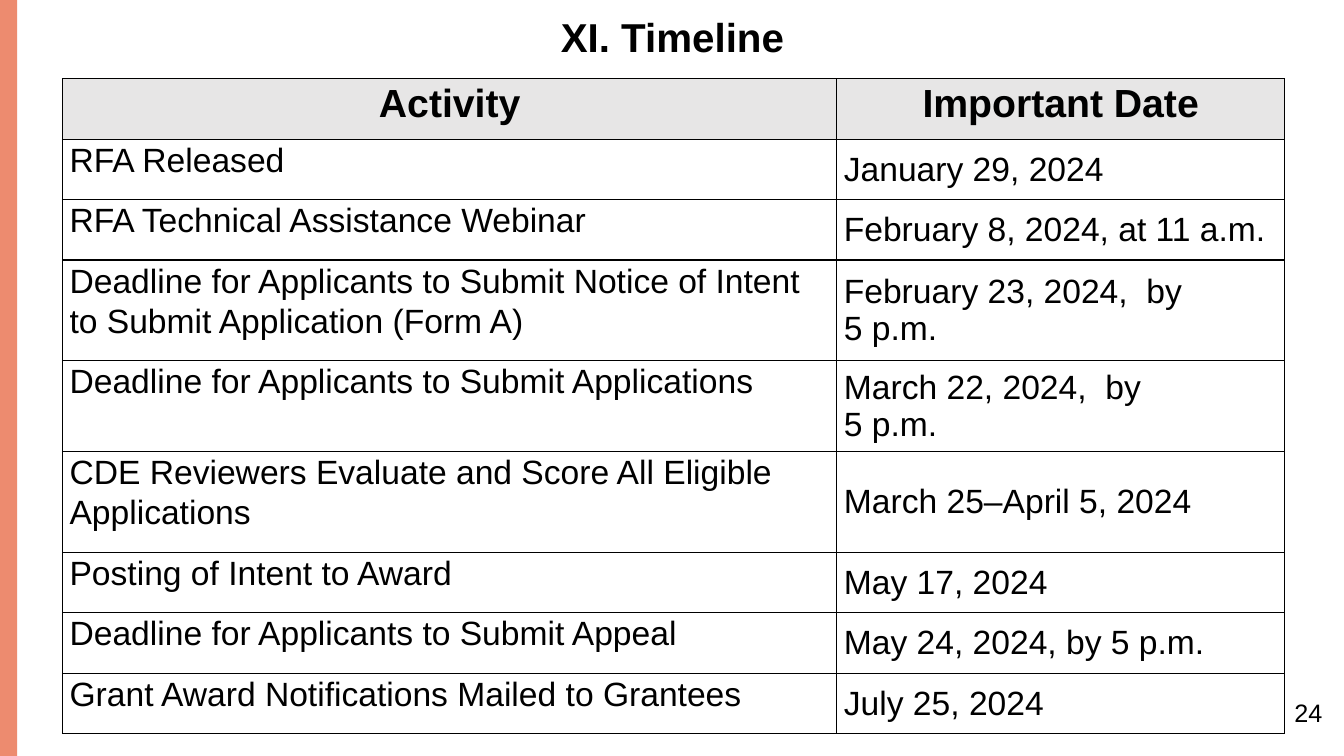
from dataclasses import dataclass

from lxml import etree
from pptx import Presentation
from pptx.dml.color import RGBColor
from pptx.enum.shapes import MSO_SHAPE
from pptx.enum.text import MSO_ANCHOR, PP_ALIGN
from pptx.oxml.ns import qn
from pptx.util import Inches, Pt

RECTANGLE = MSO_SHAPE.RECTANGLE
TOP, MIDDLE = MSO_ANCHOR.TOP, MSO_ANCHOR.MIDDLE
LEFT, CENTER = PP_ALIGN.LEFT, PP_ALIGN.CENTER


@dataclass(frozen=True)
class Theme:
    """Colours and type sizes of the deck."""
    font: str = "Arial"
    ink: str = "000000"
    accent: str = "ED8B6F"
    header: str = "E7E6E6"
    paper: str = "FFFFFF"
    title: float = 28.8
    heading: float = 28
    body: float = 24
    number: float = 18
    rule: float = 1


THEME = Theme()
COLUMN_WIDTHS = (7.68, 4.44)
HEADINGS = ("Activity", "Important Date")
TIMELINE = (
    (0.6, "RFA Released", "January 29, 2024"),
    (0.6, "RFA Technical Assistance Webinar", "February 8, 2024, at 11 a.m."),
    (1, "Deadline for Applicants to Submit Notice of Intent to Submit Application (Form A)",
     "February 23, 2024,  by \n5 p.m."),
    (0.9, "Deadline for Applicants to Submit Applications", "March 22, 2024,  by \n5 p.m."),
    (1, "CDE Reviewers Evaluate and Score All Eligible Applications", "March 25–April 5, 2024"),
    (0.6, "Posting of Intent to Award", "May 17, 2024"),
    (0.6, "Deadline for Applicants to Submit Appeal", "May 24, 2024, by 5 p.m."),
    (0.6, "Grant Award Notifications Mailed to Grantees", "July 25, 2024"),
)


def write(frame, text, *, size, bold=False, align=LEFT, leading=1.0, gap=0):
    """Write one formatted paragraph into a text frame."""
    frame.word_wrap = True
    para = frame.paragraphs[0]
    para.text = text
    para.alignment = align
    para.line_spacing = leading
    para.space_before = para.space_after = Pt(gap)
    for span in para.runs:
        span.font.name = THEME.font
        span.font.size = Pt(size)
        span.font.bold = bold
        span.font.color.rgb = RGBColor.from_string(THEME.ink)


def add_side_band(page, left, top, width, height):
    """Draw the coloured band along the page edge."""
    band = page.shapes.add_shape(
        RECTANGLE, Inches(left), Inches(top), Inches(width), Inches(height))
    band.shadow.inherit = False
    band.fill.solid()
    band.fill.fore_color.rgb = RGBColor.from_string(THEME.accent)
    band.line.fill.background()


def add_label(page, left, top, width, height, text, anchor=TOP, **style):
    """Place a text box on the page."""
    box = page.shapes.add_textbox(Inches(left), Inches(top), Inches(width), Inches(height))
    box.text_frame.vertical_anchor = anchor
    write(box.text_frame, text, **style)


def add_borders(cell):
    """Rule all four sides of a table cell."""
    properties = cell._tc.get_or_add_tcPr()
    for side in ("a:lnL", "a:lnR", "a:lnT", "a:lnB"):
        line = etree.SubElement(properties, qn(side), w=str(Pt(THEME.rule)))
        fill = etree.SubElement(line, qn("a:solidFill"))
        etree.SubElement(fill, qn("a:srgbClr"), val=THEME.ink)


def fill_cell(cell, text, color, anchor, **style):
    """Set the text, borders and fill of a table cell."""
    cell.margin_left = cell.margin_right = Inches(0.07)
    cell.margin_top = cell.margin_bottom = 0
    cell.vertical_anchor = anchor
    write(cell.text_frame, text, gap=6, **style)
    add_borders(cell)
    cell.fill.solid()
    cell.fill.fore_color.rgb = RGBColor.from_string(color)


def add_timeline(page, left, top, width, height):
    """Build the table of activities and dates."""
    table = page.shapes.add_table(
        len(TIMELINE) + 1, len(HEADINGS),
        Inches(left), Inches(top), Inches(width), Inches(height)).table
    table.horz_banding = False
    for column, column_width in zip(table.columns, COLUMN_WIDTHS):
        column.width = Inches(column_width)
    table.rows[0].height = Inches(0.6)
    for index, heading in enumerate(HEADINGS):
        fill_cell(table.cell(0, index), heading, THEME.header, TOP,
                  size=THEME.heading, bold=True, align=CENTER, leading=1.07)
    for index, (row_height, activity, date) in enumerate(TIMELINE, start=1):
        table.rows[index].height = Inches(row_height)
        fill_cell(table.cell(index, 0), activity, THEME.paper, TOP,
                  size=THEME.body, leading=1.07)
        fill_cell(table.cell(index, 1), date, THEME.paper, MIDDLE, size=THEME.body)


def build_timeline_page(deck):
    """Add the timeline page to the deck."""
    page = deck.slides.add_slide(deck.slide_layouts[6])
    add_side_band(page, 0, 0, 0.17, 7.5)
    add_label(page, 0.17, 0.15, 13, 0.48, "XI. Timeline", MIDDLE,
              size=THEME.title, bold=True, align=CENTER, leading=0.9)
    add_timeline(page, 0.62, 0.78, sum(COLUMN_WIDTHS), 6.5)
    add_label(page, 12.74, 6.87, 0.59, 0.48, "24", size=THEME.number)


def main():
    """Create and save the deck."""
    deck = Presentation()
    deck.slide_width, deck.slide_height = Inches(13.33), Inches(7.5)
    build_timeline_page(deck)
    deck.save("out.pptx")


if __name__ == "__main__":
    main()
